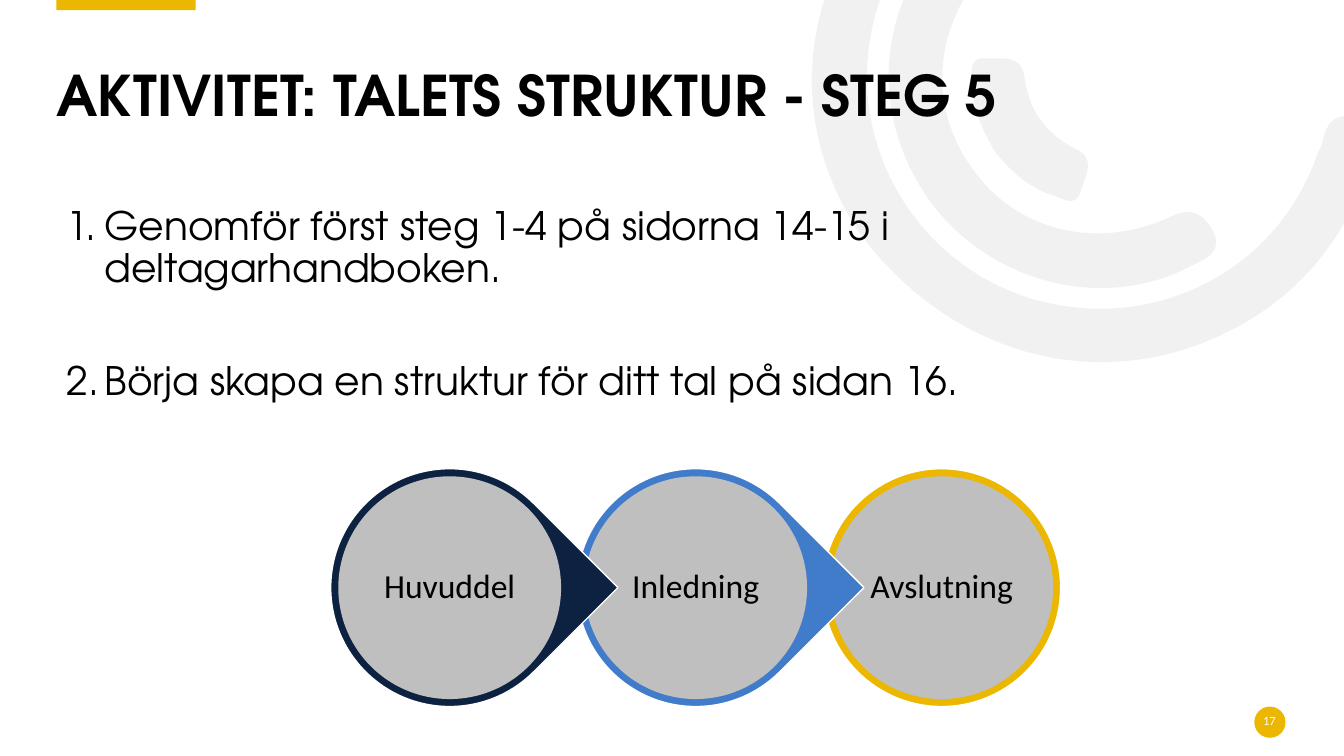
from dataclasses import dataclass

from lxml import etree
from pptx import Presentation
from pptx.dml.color import RGBColor
from pptx.enum.shapes import MSO_SHAPE
from pptx.enum.text import MSO_ANCHOR, MSO_AUTO_SIZE, PP_ALIGN
from pptx.oxml.ns import qn
from pptx.shapes.autoshape import Shape
from pptx.slide import Slide
from pptx.text.text import TextFrame
from pptx.util import Inches, Pt

RECTANGLE, OVAL, TEAR = MSO_SHAPE.RECTANGLE, MSO_SHAPE.OVAL, MSO_SHAPE.TEAR
MIDDLE, BOTTOM, TOP = MSO_ANCHOR.MIDDLE, MSO_ANCHOR.BOTTOM, MSO_ANCHOR.TOP
LEFT, CENTER = PP_ALIGN.LEFT, PP_ALIGN.CENTER
NO_AUTOFIT = MSO_AUTO_SIZE.NONE

BLACK = RGBColor(0x00, 0x00, 0x00)
WHITE = RGBColor(0xFF, 0xFF, 0xFF)
YELLOW = RGBColor(0xEB, 0xB7, 0x00)
BLUE = RGBColor(0x40, 0x7C, 0xCA)
NAVY = RGBColor(0x0D, 0x22, 0x40)
GREY = RGBColor(0xBF, 0xBF, 0xBF)
ARC_GREY = RGBColor(0xE7, 0xE6, 0xE6)

HEADING_FONT = "TeX Gyre Adventor"
LABEL_FONT = "Calibri"
ARC_OPACITY = 53000
HANGING = Inches(0.38)

STAGE_LEFT, STAGE_TOP, STAGE_PITCH = 3.28, 4.65, 2.44
RING_SIZE, DISC_SIZE, LABEL_SIZE = 2.36, 2.21, 1.58

Point = tuple[float, float]


@dataclass(frozen=True)
class Arc:
    start: Point
    curves: tuple[tuple[float, ...], ...]


@dataclass(frozen=True)
class Stage:
    label: str
    color: RGBColor
    outline: MSO_SHAPE
    rotation: float


ARCS = (
    Arc((8.51, 2.29), (
        (7.99, 1.49, 7.87, 0.5, 8.38, -0.5),
        (8.9, -1.52, 9.76, -2.03, 10.9, -2.07),
        (11.05, -2.07, 11.21, -2.1, 11.31, -1.95),
        (11.44, -1.75, 11.27, -1.54, 10.98, -1.54),
        (9.67, -1.54, 8.65, -0.59, 8.6, 0.68),
        (8.56, 1.81, 9.36, 2.81, 10.46, 3.02),
        (11.6, 3.24, 12.7, 2.61, 13.07, 1.52),
        (13.09, 1.48, 13.11, 1.44, 13.12, 1.4),
        (13.16, 1.19, 13.27, 1.11, 13.49, 1.17),
        (13.73, 1.24, 13.67, 1.41, 13.61, 1.56),
        (13.34, 2.45, 12.78, 3.07, 11.91, 3.41),
        (10.7, 3.87, 9.36, 3.45, 8.51, 2.29),
    )),
    Arc((9.22, 1.99), (
        (8.62, 1.15, 8.69, 0.07, 9.4, -0.68),
        (9.51, -0.79, 9.62, -0.95, 9.8, -0.78),
        (9.95, -0.64, 9.97, -0.5, 9.79, -0.32),
        (9.25, 0.26, 9.2, 1.08, 9.65, 1.68),
        (10.08, 2.29, 10.88, 2.49, 11.61, 2.15),
        (11.82, 2.05, 11.93, 2.12, 12.03, 2.29),
        (12.13, 2.5, 11.97, 2.56, 11.83, 2.63),
        (10.96, 3.1, 9.83, 2.82, 9.22, 1.99),
    )),
    Arc((9.87, 1.51), (
        (9.75, 1.3, 9.64, 1.07, 9.64, 0.82),
        (9.64, 0.73, 9.61, 0.57, 9.76, 0.58),
        (9.92, 0.59, 10.13, 0.53, 10.16, 0.76),
        (10.21, 1.1, 10.36, 1.32, 10.67, 1.48),
        (10.88, 1.57, 10.76, 1.76, 10.72, 1.89),
        (10.68, 2.06, 10.55, 1.98, 10.45, 1.94),
        (10.21, 1.87, 10.03, 1.7, 9.87, 1.51),
    )),
)
STAGES = (
    Stage("Huvuddel", NAVY, TEAR, 45),
    Stage("Inledning", BLUE, TEAR, 45),
    Stage("Avslutning", YELLOW, OVAL, 0),
)
STEPS = (
    "Genomför först steg 1-4 på sidorna 14-15 i deltagarhandboken.",
    "Börja skapa en struktur för ditt tal på sidan 16.",
)


def paint(shape: Shape, color: RGBColor) -> None:
    shape.shadow.inherit = False
    shape.fill.solid()
    shape.fill.fore_color.rgb = color
    shape.line.fill.background()


def bend_segments(shape: Shape) -> None:
    segments = list(shape._element.iter(qn("a:lnTo")))
    for first in range(0, len(segments), 3):
        curve = etree.Element(qn("a:cubicBezTo"))
        segments[first].addprevious(curve)
        for segment in segments[first:first + 3]:
            curve.append(segment[0])
            segment.getparent().remove(segment)


def draw_arc(slide: Slide, arc: Arc) -> None:
    points = [(Inches(curve[i]), Inches(curve[i + 1]))
              for curve in arc.curves for i in (0, 2, 4)]
    start_x, start_y = arc.start
    builder = slide.shapes.build_freeform(Inches(start_x), Inches(start_y))
    builder.add_line_segments(points, close=True)
    shape = builder.convert_to_shape()
    bend_segments(shape)
    paint(shape, ARC_GREY)
    color = shape._element.spPr.find(qn("a:solidFill"))[0]
    etree.SubElement(color, qn("a:alpha")).set("val", str(ARC_OPACITY))


def draw_shape(slide: Slide, kind: MSO_SHAPE, left: float, top: float,
               width: float, height: float, color: RGBColor) -> Shape:
    shape = slide.shapes.add_shape(
        kind, Inches(left), Inches(top), Inches(width), Inches(height))
    paint(shape, color)
    return shape


def set_frame(frame: TextFrame, anchor: MSO_ANCHOR, inset: float) -> None:
    frame.word_wrap = True
    frame.auto_size = NO_AUTOFIT
    frame.vertical_anchor = anchor
    frame.margin_left = frame.margin_right = Inches(inset)
    frame.margin_top = frame.margin_bottom = Inches(inset)


def format_text(frame: TextFrame, font: str, size: float, color: RGBColor,
                align: PP_ALIGN, bold: bool = False) -> None:
    for paragraph in frame.paragraphs:
        paragraph.alignment = align
        paragraph.line_spacing = 0.9
        for run in paragraph.runs:
            run.font.name = font
            run.font.size = Pt(size)
            run.font.bold = bold
            run.font.color.rgb = color


def draw_label(slide: Slide, text: str, left: float, top: float, width: float,
               height: float, inset: float, size: float, color: RGBColor) -> None:
    frame = slide.shapes.add_textbox(
        Inches(left), Inches(top), Inches(width), Inches(height)).text_frame
    set_frame(frame, MIDDLE, inset)
    frame.text = text
    format_text(frame, LABEL_FONT, size, color, CENTER)


def draw_title(slide: Slide) -> None:
    title = slide.shapes.title
    slide.shapes._spTree.append(title._element)
    title.left, title.top = Inches(0.56), Inches(0.27)
    title.width, title.height = Inches(12.19), Inches(1.01)
    set_frame(title.text_frame, BOTTOM, 0)
    title.text_frame.text = "AKTIVITET: TALETS STRUKTUR - STEG 5"
    format_text(title.text_frame, HEADING_FONT, 40, BLACK, LEFT, bold=True)


def draw_steps(slide: Slide) -> None:
    frame = slide.shapes.add_textbox(
        Inches(0.56), Inches(2), Inches(11.85), Inches(2.46)).text_frame
    set_frame(frame, TOP, 0.05)
    frame.margin_left = frame.margin_right = Inches(0.1)
    frame.text = "\n".join(STEPS)
    for paragraph in frame.paragraphs:
        properties = paragraph._p.get_or_add_pPr()
        properties.set("marL", str(HANGING))
        properties.set("indent", str(-HANGING))
        numbering = etree.SubElement(properties, qn("a:buAutoNum"))
        numbering.set("type", "arabicPeriod")
    format_text(frame, HEADING_FONT, 28, BLACK, LEFT)
    frame.paragraphs[1].space_before = Pt(50)


def draw_stage(slide: Slide, stage: Stage, left: float) -> None:
    ring = draw_shape(slide, stage.outline, left, STAGE_TOP, RING_SIZE, RING_SIZE,
                      stage.color)
    ring.rotation = stage.rotation
    ring.line.color.rgb = WHITE
    ring.line.width = Pt(1)
    rim = (RING_SIZE - DISC_SIZE) / 2
    draw_shape(slide, OVAL, left + rim, STAGE_TOP + rim, DISC_SIZE, DISC_SIZE, GREY)
    pad = (RING_SIZE - LABEL_SIZE) / 2
    draw_label(slide, stage.label, left + pad, STAGE_TOP + pad,
               LABEL_SIZE, LABEL_SIZE, 0.03, 24, BLACK)


def main() -> None:
    deck = Presentation()
    deck.slide_width, deck.slide_height = Inches(13.33), Inches(7.5)
    slide = deck.slides.add_slide(deck.slide_layouts.get_by_name("Title Only"))
    for arc in ARCS:
        draw_arc(slide, arc)
    draw_shape(slide, RECTANGLE, 0.56, -0.02, 1.38, 0.12, YELLOW)
    draw_shape(slide, OVAL, 12.44, 7.01, 0.31, 0.31, YELLOW)
    draw_label(slide, "17", 12.43, 7.06, 0.32, 0.2, 0, 9, WHITE)
    draw_steps(slide)
    draw_title(slide)
    for index, stage in reversed(list(enumerate(STAGES))):
        draw_stage(slide, stage, STAGE_LEFT + index * STAGE_PITCH)
    deck.save("out.pptx")


if __name__ == "__main__":
    main()
